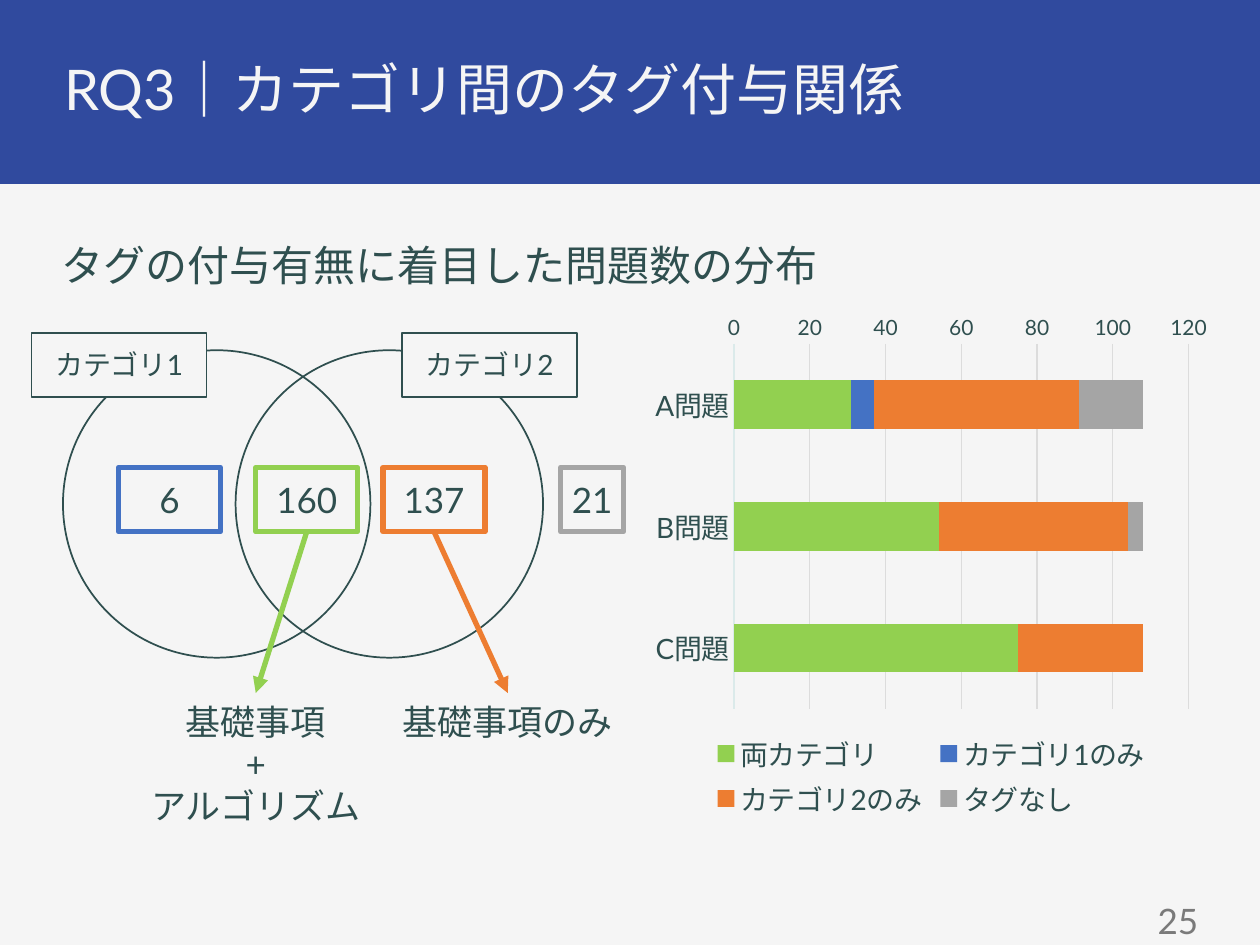
"""Build the RQ3 slide: a Venn diagram of tag categories beside a stacked bar chart."""
from dataclasses import dataclass

from lxml.etree import SubElement
from pptx import Presentation
from pptx.chart.data import CategoryChartData
from pptx.dml.color import RGBColor
from pptx.enum.chart import XL_CHART_TYPE, XL_LEGEND_POSITION, XL_TICK_MARK
from pptx.enum.shapes import MSO_CONNECTOR, MSO_SHAPE
from pptx.enum.text import MSO_ANCHOR, PP_ALIGN
from pptx.oxml.ns import qn
from pptx.util import Inches, Pt

COLS, ROWS = 40, 30
WIDTH, HEIGHT = Inches(10), Inches(7.5)
LATIN, ASIAN = "Lato", "Noto Sans CJK JP"
COLORS = {
    "paper": "F5F5F5", "header": "304A9E", "ink": "2F4F4F", "number": "7A7A7A",
    "both": "92D050", "first": "4472C4", "second": "ED7D31", "none": "A5A5A5",
    "axis": "DBEAEA", "grid": "DCDCDC",
}


@dataclass(frozen=True)
class Box:
    """A rectangle in grid columns and rows."""
    col: float
    row: float
    cols: float
    rows: float

    def emu(self) -> tuple[int, int, int, int]:
        return (round(self.col * WIDTH / COLS), round(self.row * HEIGHT / ROWS),
                round(self.cols * WIDTH / COLS), round(self.rows * HEIGHT / ROWS))


@dataclass(frozen=True)
class Text:
    """Paragraphs that share one style."""
    lines: tuple[str, ...]
    size: float
    color: str = "ink"
    align: PP_ALIGN = PP_ALIGN.CENTER
    anchor: MSO_ANCHOR = MSO_ANCHOR.TOP
    inset: float = 0.1
    spacing: float = 1.0


@dataclass(frozen=True)
class Count:
    """A framed number of problems."""
    value: str
    color: str
    col: float
    cols: float = 3.24


@dataclass(frozen=True)
class Series:
    """One tag combination in the chart."""
    name: str
    color: str
    values: tuple[int, ...]


TAGS = (("カテゴリ1", 1), ("カテゴリ2", 12.76))
COUNTS = (
    Count("160", "both", 8.12),
    Count("137", "second", 12.16),
    Count("6", "first", 3.76),
    Count("21", "none", 17.8, 2),
)
NOTES = {
    "both": (Box(4, 22, 8.24, 4.44), ("基礎事項", "+", "アルゴリズム")),
    "second": (Box(12.32, 22, 7.6, 1.76), ("基礎事項のみ",)),
}
PROBLEMS = ("A問題", "B問題", "C問題")
SERIES = (
    Series("両カテゴリ", "both", (31, 54, 75)),
    Series("カテゴリ1のみ", "first", (6, 0, 0)),
    Series("カテゴリ2のみ", "second", (54, 50, 33)),
    Series("タグなし", "none", (17, 4, 0)),
)


def rgb(name: str) -> RGBColor:
    return RGBColor.from_string(COLORS[name])


def style_font(font, size: float, color: str) -> None:
    font.size = Pt(size)
    font.name = LATIN
    font.color.rgb = rgb(color)


def add_asian_font(props) -> None:
    latin = props.find(qn("a:latin"))
    ea = SubElement(props, qn("a:ea"), typeface=ASIAN)
    latin.addnext(ea)


def write(sp, text: Text) -> None:
    tf = sp.text_frame
    tf.word_wrap = True
    tf.vertical_anchor = text.anchor
    tf.margin_left = tf.margin_right = Inches(text.inset)
    tf.margin_top = tf.margin_bottom = Inches(min(text.inset, 0.06))
    for i, line in enumerate(text.lines):
        p = tf.add_paragraph() if i else tf.paragraphs[0]
        p.alignment = text.align
        p.line_spacing = text.spacing
        r = p.add_run()
        r.text = line
        style_font(r.font, text.size, text.color)
        add_asian_font(r.font._element)


def add_text(s, box: Box, text: Text):
    sp = s.shapes.add_textbox(*box.emu())
    write(sp, text)
    return sp


def add_outline(s, kind: MSO_SHAPE, box: Box, fill: str | None, line: str | None,
                width: float = 1):
    sp = s.shapes.add_shape(kind, *box.emu())
    sp.shadow.inherit = False
    if fill:
        sp.fill.solid()
        sp.fill.fore_color.rgb = rgb(fill)
    else:
        sp.fill.background()
    if line:
        sp.line.color.rgb = rgb(line)
        sp.line.width = Pt(width)
    else:
        sp.line.fill.background()
    return sp


def add_arrow(s, start, end, color: str) -> None:
    cx = s.shapes.add_connector(MSO_CONNECTOR.STRAIGHT, 0, 0, 0, 0)
    cx.begin_connect(start, 2)
    cx.end_connect(end, 0)
    cx.line.color.rgb = rgb(color)
    cx.line.width = Pt(3)
    SubElement(cx.line._get_or_add_ln(), qn("a:tailEnd"), type="triangle")
    SubElement(cx._element.spPr, qn("a:effectLst"))


def add_bars(s, box: Box) -> None:
    data = CategoryChartData()
    data.categories = PROBLEMS
    for item in SERIES:
        data.add_series(item.name, item.values)
    chart = s.shapes.add_chart(XL_CHART_TYPE.BAR_STACKED, *box.emu(), data).chart
    chart.has_title = False
    style_font(chart.font, 10, "ink")
    chart.has_legend = True
    chart.legend.position = XL_LEGEND_POSITION.BOTTOM
    chart.legend.include_in_layout = False
    plot = chart.plots[0]
    plot.gap_width, plot.overlap, plot.vary_by_categories = 150, 100, False
    for series, item in zip(plot.series, SERIES):
        series.format.fill.solid()
        series.format.fill.fore_color.rgb = rgb(item.color)
    cat, val = chart.category_axis, chart.value_axis
    for axis in (cat, val):
        axis.major_tick_mark = axis.minor_tick_mark = XL_TICK_MARK.NONE
    cat.reverse_order = True
    cat.format.line.color.rgb = rgb("axis")
    cat.format.line.width = Pt(0.75)
    val.minimum_scale, val.maximum_scale, val.major_unit = 0, 120, 20
    val.format.line.fill.background()
    val.major_gridlines.format.line.color.rgb = rgb("grid")
    val.major_gridlines.format.line.width = Pt(0.75)
    for font, size in ((cat.tick_labels.font, 16), (val.tick_labels.font, 12),
                       (chart.legend.font, 16)):
        style_font(font, size, "ink")
        add_asian_font(font._element)


def main() -> None:
    prs = Presentation()
    prs.slide_width, prs.slide_height = WIDTH, HEIGHT
    s = prs.slides.add_slide(prs.slide_layouts[6])
    s.background.fill.solid()
    s.background.fill.fore_color.rgb = rgb("paper")

    add_outline(s, MSO_SHAPE.RECTANGLE, Box(0, 0, COLS, 5.84), "header", None)
    add_text(s, Box(1.72, 1.72, 36.52, 2.36), Text(
        ("RQ3｜カテゴリ間のタグ付与関係",), 32, "paper", PP_ALIGN.LEFT, inset=0.08, spacing=0.9))
    add_text(s, Box(1.72, 7.56, 36.52, 2), Text(
        ("タグの付与有無に着目した問題数の分布",), 24, align=PP_ALIGN.LEFT, inset=0.06, spacing=0.9))
    add_text(s, Box(29.28, 28.44, 9, 1.56), Text(
        ("25",), 20, "number", PP_ALIGN.RIGHT, MSO_ANCHOR.MIDDLE, 0.06))

    for col in (2, 7.48):
        add_outline(s, MSO_SHAPE.OVAL, Box(col, 11.12, 9.76, 9.76), None, "ink")
    for label, col in TAGS:
        sp = add_outline(s, MSO_SHAPE.RECTANGLE, Box(col, 10.56, 5.56, 2.04), "paper", "ink")
        write(sp, Text((label,), 16, anchor=MSO_ANCHOR.MIDDLE))
    add_bars(s, Box(20.44, 9.64, 18.24, 16.52))
    for count in COUNTS:
        frame = add_outline(s, MSO_SHAPE.RECTANGLE, Box(count.col, 14.84, count.cols, 2.04),
                            None, count.color, 3)
        write(frame, Text((count.value,), 20, anchor=MSO_ANCHOR.MIDDLE, inset=0))
        if count.color in NOTES:
            box, lines = NOTES[count.color]
            add_arrow(s, frame, add_text(s, box, Text(lines, 20)), count.color)
    prs.save("out.pptx")


if __name__ == "__main__":
    main()
